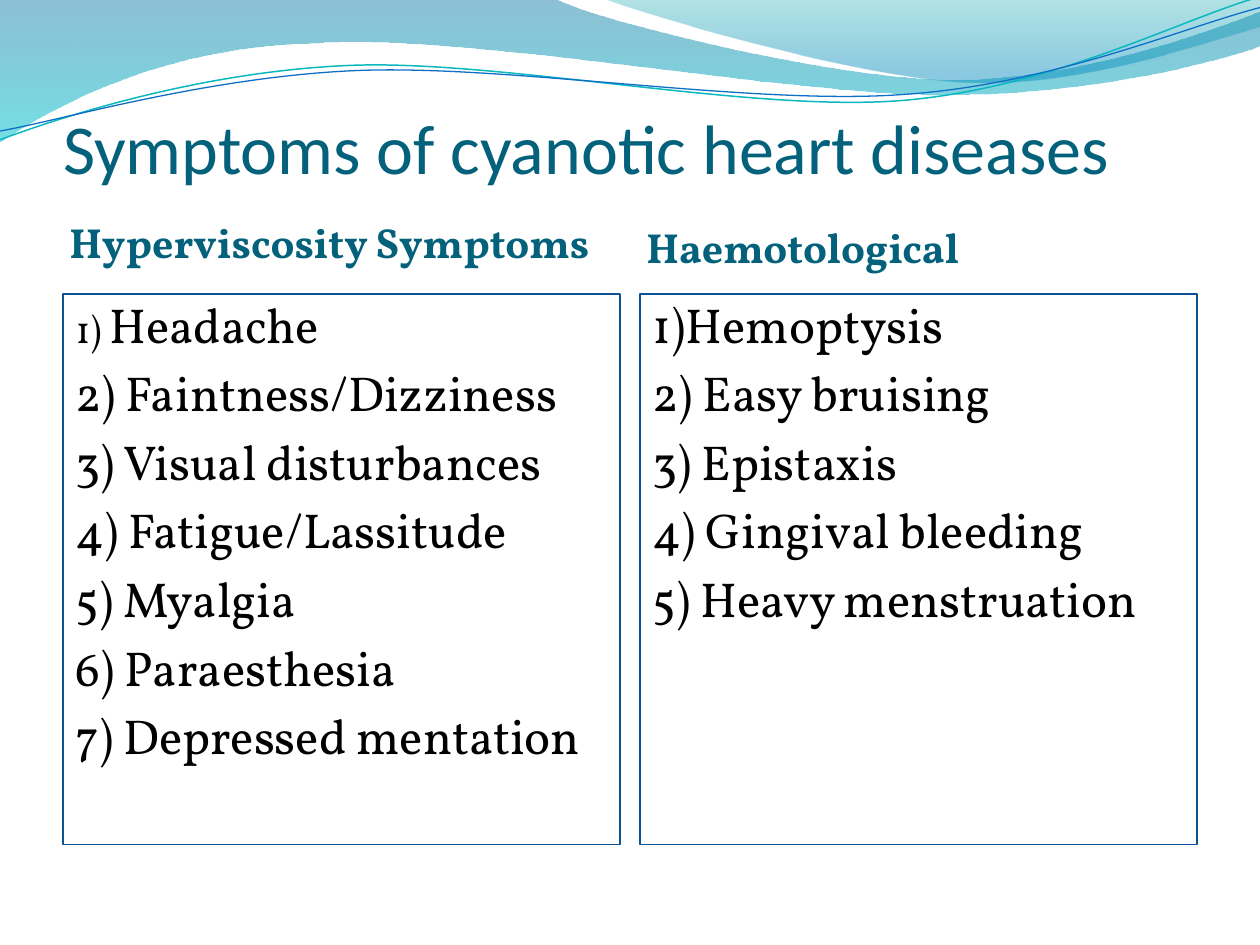
from dataclasses import dataclass
from math import cos, radians, sin

from lxml import etree
from pptx import Presentation
from pptx.dml.color import RGBColor
from pptx.enum import text
from pptx.oxml.ns import qn
from pptx.util import Inches, Pt


@dataclass(frozen=True)
class Theme:
    heading: str = "04617B"
    body: str = "000000"
    border: str = "0B5394"
    title_font: str = "Calibri"
    body_font: str = "Vollkorn"
    title_size: int = 40
    heading_size: int = 24
    item_size: int = 28
    small_size: int = 22


THEME = Theme()
COLUMN_W = 4.42
LIST_TOP = 7 / 3
TILT = 357.3

# Box, then an outline in slide inches: a start point, 2-number lines and
# 6-number curves. Gradient stops are position, colour and opacity in percent.
BANDS = [
    ((-0.01, -0.01, 10.02, 1.14),
     [(0, 0), (4.4, -0.01), (4.76, 0.17, 6.64, 0.63, 7.58, 0.63),
      (8.53, 0.63, 9.58, 0.26, 10, 0.09), (10.01, 0.36),
      (9.83, 0.44, 8.7, 0.76, 7.46, 0.75), (6.22, 0.75, 3.82, 0.28, 2.57, 0.34),
      (1.29, 0.36, 0.46, 0.83, -0.01, 1.13), (0, 0)],
     [(0, "0074A1", 45), (100, "00C6CF", 55)]),
    ((4.79, -0.01, 5.21, 0.7),
     [(4.79, -0.01), (5.09, 0.11, 6.82, 0.62, 7.69, 0.65),
      (8.56, 0.69, 9.61, 0.32, 10, 0.21), (10, 0), (4.79, -0.01)],
     [(0, "00A1A9", 30), (80, "008BBF", 45)]),
]
STRANDS = [
    ((-0.02, 0.22, 10.02, 0.71),
     [(0, 1.11), (0.48, 0.93, 1.58, 0.57, 2.77, 0.52),
      (3.95, 0.47, 5.93, 0.89, 7.13, 0.8), (8.33, 0.71, 9.38, 0.15, 9.98, -0.02)],
     "0AB8BF", 0.85),
    ((-0.02, 0.3, 10.03, 0.58),
     [(0, 1.04), (0.47, 0.96, 1.64, 0.61, 2.83, 0.56),
      (4.03, 0.51, 5.97, 0.84, 7.17, 0.75), (8.36, 0.67, 9.41, 0.21, 10, 0.06)],
     "0F6FC6", 0.75),
]


def rgb(value):
    return RGBColor.from_string(value)


def add_text(p, words, size, color=THEME.body, font=THEME.body_font, bold=False):
    r = p.add_run()
    r.text = words
    r.font.size, r.font.name, r.font.bold = Pt(size), font, bold
    r.font.color.rgb = rgb(color)


def place(sp, box, insets, anchor):
    """Set a placeholder's box and text margins (inches) and return its text frame."""
    sp.left, sp.top, sp.width, sp.height = map(Inches, box)
    tf = sp.text_frame
    tf.margin_left, tf.margin_top, tf.margin_right, tf.margin_bottom = map(Inches, insets)
    tf.vertical_anchor = anchor
    tf.word_wrap = True
    tf.auto_size = text.MSO_AUTO_SIZE.NONE
    return tf


def to_box(point, box, turn):
    """Convert a slide point to coordinates in a box that is turned about its centre."""
    left, top, width, height = box
    dx, dy = point[0] - left - width / 2, point[1] - top - height / 2
    c, n = cos(radians(-turn)), sin(radians(-turn))
    return width / 2 + dx * c - dy * n, height / 2 + dx * n + dy * c


def add_outline(shapes, box, segments, close, turn=0):
    """Add a freeform that fills the box, with true curves in its path."""
    left, top, width, height = box
    builder = shapes.build_freeform(Inches(left), Inches(top))
    builder.add_line_segments([(Inches(left + width), Inches(top + height))], close=close)
    sp = builder.convert_to_shape()
    path = next(sp._element.iter(qn("a:path")))
    for child in list(path):
        path.remove(child)
    for i, seg in enumerate(segments):
        tag = "a:moveTo" if i == 0 else "a:lnTo" if len(seg) == 2 else "a:cubicBezTo"
        step = etree.SubElement(path, qn(tag))
        for point in zip(seg[::2], seg[1::2]):
            x, y = to_box(point, box, turn)
            etree.SubElement(step, qn("a:pt"), x=str(Inches(x)), y=str(Inches(y)))
    if close:
        etree.SubElement(path, qn("a:close"))
    sp.rotation = turn
    sp.shadow.inherit = False
    return sp


def add_band(shapes, box, segments, stops):
    sp = add_outline(shapes, box, segments, True)
    sp.line.fill.background()
    sp.fill.gradient()
    sp.fill.gradient_angle = 270
    for stop, (position, color, _) in zip(sp.fill.gradient_stops, stops):
        stop.position = position / 100
        stop.color.rgb = rgb(color)
    for clr, (_, _, opacity) in zip(sp._element.spPr.iter(qn("a:srgbClr")), stops):
        etree.SubElement(clr, qn("a:alpha")).set("val", str(opacity * 1000))
    return sp


def add_strand(shapes, box, segments, color, width):
    sp = add_outline(shapes, box, segments, False, TILT)
    sp.fill.background()
    sp.line.color.rgb = rgb(color)
    sp.line.width = Pt(width)


def add_waves(s):
    """Draw the header waves behind the placeholders."""
    waves = [add_band(s.shapes, *band) for band in BANDS]
    group = s.shapes.add_group_shape()
    for strand in STRANDS:
        add_strand(group.shapes, *strand)
    for i, sp in enumerate(waves + [group]):
        s.shapes._spTree.insert(2 + i, sp._element)


def fill_title(sp, box, words):
    tf = place(sp, box, (0, 0.05, 0, 0), text.MSO_ANCHOR.BOTTOM)
    tf.paragraphs[0].alignment = text.PP_ALIGN.LEFT
    add_text(tf.paragraphs[0], words, THEME.title_size, THEME.heading, THEME.title_font)


def fill_heading(sp, box, words):
    tf = place(sp, box, (0.05, 0, 0.05, 0), text.MSO_ANCHOR.MIDDLE)
    add_text(tf.paragraphs[0], words, THEME.heading_size, THEME.heading, bold=True)


def fill_list(sp, box, items):
    """Fill a bordered list; each item is a list of (text, size) runs."""
    tf = place(sp, box, (0.1, 0, 0.1, 0.05), text.MSO_ANCHOR.TOP)
    sp.line.color.rgb = rgb(THEME.border)
    sp.line.width = Pt(0.75)
    for i, runs in enumerate(items):
        p = tf.add_paragraph() if i else tf.paragraphs[0]
        pPr = p._p.get_or_add_pPr()
        pPr.set("marL", str(Inches(0.3)))
        pPr.set("indent", str(Inches(-0.3)))
        etree.SubElement(pPr, qn("a:buNone"))
        for words, size in runs:
            add_text(p, words, size)


def fill_column(heading, listing, left, heading_top, heading_h, title, items):
    fill_heading(heading, (left, heading_top, COLUMN_W, heading_h), title)
    fill_list(listing, (left, LIST_TOP, COLUMN_W, 4.37), items)


def main():
    prs = Presentation()
    prs.slide_width, prs.slide_height = Inches(10), Inches(7.5)
    s = prs.slides.add_slide(prs.slide_layouts.get_by_name("Comparison"))
    title, heading_1, list_1, heading_2, list_2 = s.placeholders

    viscosity = ["2) Faintness/Dizziness", "3) Visual disturbances", "4) Fatigue/Lassitude",
                 "5) Myalgia", "6) Paraesthesia", "7) Depressed mentation"]
    blood = ["1)Hemoptysis", "2) Easy bruising", "3) Epistaxis",
             "4) Gingival bleeding", "5) Heavy menstruation"]
    size = THEME.item_size
    first = [("1) ", THEME.small_size), ("Headache", size)]

    add_waves(s)
    fill_title(title, (0.5, 0.33, 9, 1.17), "Symptoms of cyanotic heart diseases")
    fill_column(heading_1, list_1, 0.5, 1.5, 0.83, "Hyperviscosity Symptoms",
                [first] + [[(item, size)] for item in viscosity])
    fill_column(heading_2, list_2, 5.08, 1.42, 1.08, "Haemotological",
                [[(item, size)] for item in blood])
    prs.save("out.pptx")


if __name__ == "__main__":
    main()
